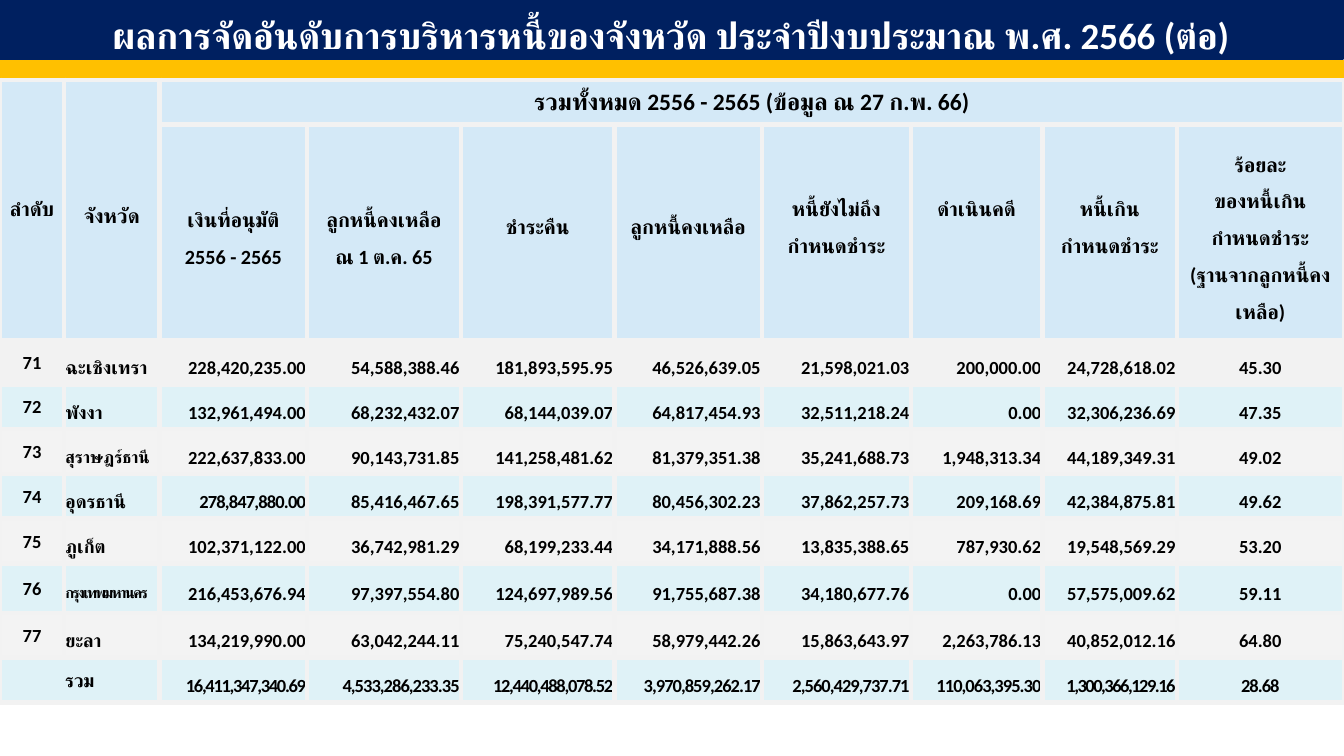
from lxml import etree
from pptx import Presentation
from pptx.dml.color import RGBColor
from pptx.enum import shapes, text
from pptx.oxml import ns
from pptx.util import Inches, Pt

HUES = {"navy": "002060", "gold": "FFC000", "head": "CAE4F6", "mint": "D7EFF5",
        "grey": "F2F2F2", "black": "000000", "white": "FFFFFF"}
LEFT, MID, RIGHT = text.PP_ALIGN.LEFT, text.PP_ALIGN.CENTER, text.PP_ALIGN.RIGHT


def write(frame, words, size, hue, align=MID, gap=None, track=0):
    frame.text = words
    for para in frame.paragraphs:
        para.alignment = align
        if gap:
            para.line_spacing = gap
        font = para.font
        font.name, font.size, font.bold = "Calibri", Pt(size), True
        font.color.rgb = RGBColor.from_string(HUES[hue])
        props = para._p.pPr.find(ns.qn("a:defRPr"))
        etree.SubElement(props, ns.qn("a:cs"), typeface="Calibri")
        if track:
            props.set("spc", str(track))


def paint(cell, hue, alpha):
    cell.margin_left = cell.margin_right = cell.margin_top = Inches(0.01)
    cell.margin_bottom = 0
    cell.vertical_anchor = text.MSO_ANCHOR.MIDDLE
    cell.fill.solid()
    cell.fill.fore_color.rgb = RGBColor.from_string(HUES[hue])
    props = cell._tc.tcPr
    if alpha < 100:
        tint = props.find(".//" + ns.qn("a:srgbClr"))
        etree.SubElement(tint, ns.qn("a:alpha"), val=str(alpha * 1000))
    for spot, side in enumerate(["lnL", "lnR", "lnT", "lnB"]):
        edge = etree.Element(ns.qn("a:" + side), w=str(Pt(3)))
        solid = etree.SubElement(edge, ns.qn("a:solidFill"))
        etree.SubElement(solid, ns.qn("a:srgbClr"), val=HUES["grey"])
        props.insert(spot, edge)


deck = Presentation()
deck.slide_width, deck.slide_height = Inches(11.11), Inches(6.25)
slide = deck.slides.add_slide(deck.slide_layouts[5])

title = slide.shapes.title
title.left, title.top = Inches(-0.01), Inches(-0.02)
title.width, title.height = Inches(11.11), Inches(0.51)
title.text_frame.auto_size = text.MSO_AUTO_SIZE.NONE
title.text_frame.vertical_anchor = text.MSO_ANCHOR.MIDDLE
write(title.text_frame, "ผลการจัดอันดับการบริหารหนี้ของจังหวัด ประจำปีงบประมาณ พ.ศ. 2566 (ต่อ)",
      22, "white", gap=1.3)
band = slide.shapes.add_shape(shapes.MSO_SHAPE.RECTANGLE, 0, Inches(0.5), Inches(11.11), Inches(0.16))
band.shadow.inherit = False
for bar, hue in [(title, "navy"), (band, "gold")]:
    tone = RGBColor.from_string(HUES[hue])
    bar.fill.solid()
    bar.fill.fore_color.rgb = tone
    bar.line.color.rgb = tone
    bar.line.width = Pt(1)

heads = ["เงินที่อนุมัติ\v2556 - 2565", "ลูกหนี้คงเหลือ\nณ 1 ต.ค. 65", "ชำระคืน", "ลูกหนี้คงเหลือ",
         "หนี้ยังไม่ถึง\vกำหนดชำระ", "ดำเนินคดี", "หนี้เกิน\vกำหนดชำระ",
         "ร้อยละ\vของหนี้เกิน\vกำหนดชำระ\v(ฐานจากลูกหนี้คงเหลือ)"]
rows = [
    ["71", "ฉะเชิงเทรา", "228,420,235.00", "54,588,388.46", "181,893,595.95", "46,526,639.05",
     "21,598,021.03", "200,000.00", "24,728,618.02", "45.30"],
    ["72", "พังงา", "132,961,494.00", "68,232,432.07", "68,144,039.07", "64,817,454.93",
     "32,511,218.24", "0.00", "32,306,236.69", "47.35"],
    ["73", "สุราษฎร์ธานี", "222,637,833.00", "90,143,731.85", "141,258,481.62", "81,379,351.38",
     "35,241,688.73", "1,948,313.34", "44,189,349.31", "49.02"],
    ["74", "อุดรธานี", "278,847,880.00", "85,416,467.65", "198,391,577.77", "80,456,302.23",
     "37,862,257.73", "209,168.69", "42,384,875.81", "49.62"],
    ["75", "ภูเก็ต", "102,371,122.00", "36,742,981.29", "68,199,233.44", "34,171,888.56",
     "13,835,388.65", "787,930.62", "19,548,569.29", "53.20"],
    ["76", "กรุงเทพมหานคร", "216,453,676.94", "97,397,554.80", "124,697,989.56", "91,755,687.38",
     "34,180,677.76", "0.00", "57,575,009.62", "59.11"],
    ["77", "ยะลา", "134,219,990.00", "63,042,244.11", "75,240,547.74", "58,979,442.26",
     "15,863,643.97", "2,263,786.13", "40,852,012.16", "64.80"],
    ["รวม", "", "16,411,347,340.69", "4,533,286,233.35", "12,440,488,078.52", "3,970,859,262.17",
     "2,560,429,737.71", "110,063,395.30", "1,300,366,129.16", "28.68"],
]
sizes = {"สุราษฎร์ธานี": 10, "กรุงเทพมหานคร": 9}
tracks = {"278,847,880.00": -50, "กรุงเทพมหานคร": -100}
tracks.update(zip(rows[-1][2:], [-80, -60, -80, -60, -60, -60, -90, -60]))

grid = slide.shapes.add_table(10, 10, 0, Inches(0.66), Inches(11.1), Inches(5.14)).table
for col, wide in zip(grid.columns, [0.53, 0.79, 1.22, 1.27, 1.27, 1.22, 1.23, 1.09, 1.11, 1.38]):
    col.width = Inches(wide)
for row, high in zip(grid.rows, [0.37, 1.78] + [0.37] * 5 + [0.41, 0.37, 0.37]):
    row.height = Inches(high)

for r in range(10):
    for c in range(10):
        if r < 2:
            paint(grid.cell(r, c), "head", 80)
        elif r % 2:
            paint(grid.cell(r, c), "mint", 80)
        else:
            paint(grid.cell(r, c), "grey", 100 if r == 2 else 90)
for top, end in [((0, 0), (1, 0)), ((0, 1), (1, 1)), ((0, 2), (0, 9)), ((9, 0), (9, 1))]:
    grid.cell(*top).merge(grid.cell(*end))

write(grid.cell(0, 0).text_frame, "ลำดับ", 12, "black", gap=1.5)
write(grid.cell(0, 1).text_frame, "จังหวัด", 12, "black", gap=1.5)
write(grid.cell(0, 2).text_frame, "รวมทั้งหมด 2556 - 2565 (ข้อมูล ณ 27 ก.พ. 66)", 14, "black")
for c, head in enumerate(heads, 2):
    write(grid.cell(1, c).text_frame, head, 12, "black", gap=None if c == 7 else 1.5)
grid.cell(0, 0).margin_bottom = Inches(0.11)
for c in (4, 5, 6, 8):
    grid.cell(1, c).margin_bottom = Inches(0.18)
suit = grid.cell(1, 7)
suit.vertical_anchor = text.MSO_ANCHOR.TOP
suit.margin_top = Inches(0.6)

aligns = [MID, LEFT] + [RIGHT] * 7 + [MID]
for r, row in enumerate(rows, 2):
    for c, word in enumerate(row):
        if word:
            write(grid.cell(r, c).text_frame, word, sizes.get(word, 11), "black", aligns[c],
                  1.5 if c else None, tracks.get(word, 0))

deck.save("out.pptx")
